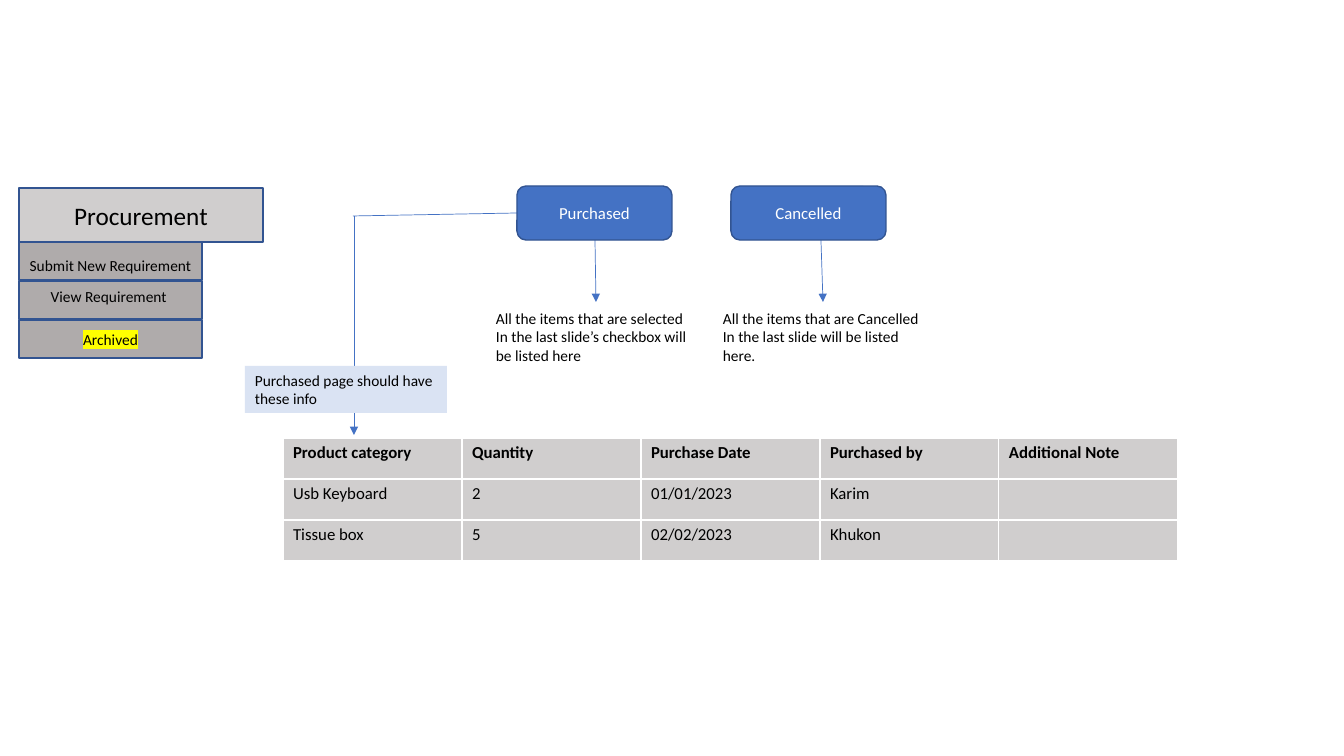
"""Build the procurement slide showing the archived purchases page."""
import pptx
import pptx.util
import pptx.dml.color
import pptx.enum.shapes
import pptx.enum.text
import pptx.oxml
import pptx.oxml.ns

PX = 914400 / 100.8
BLACK = pptx.dml.color.RGBColor(0x00, 0x00, 0x00)
WHITE = pptx.dml.color.RGBColor(0xFF, 0xFF, 0xFF)
BLUE = pptx.dml.color.RGBColor(0x44, 0x72, 0xC4)
OUTLINE = pptx.dml.color.RGBColor(0x32, 0x54, 0x91)
LIGHT_GREY = pptx.dml.color.RGBColor(0xD0, 0xCE, 0xCE)
GREY = pptx.dml.color.RGBColor(0xAF, 0xAB, 0xAB)
PALE_BLUE = pptx.dml.color.RGBColor(0xDA, 0xE3, 0xF3)
YELLOW = pptx.dml.color.RGBColor(0xFF, 0xFF, 0x00)
LEFT = pptx.enum.text.PP_ALIGN.LEFT
CENTER = pptx.enum.text.PP_ALIGN.CENTER
RECTANGLE = pptx.enum.shapes.MSO_SHAPE.RECTANGLE
ROUNDED = pptx.enum.shapes.MSO_SHAPE.ROUNDED_RECTANGLE
NAMESPACE = pptx.oxml.ns.nsdecls("a")


def write(text_frame, text, size=11, color=BLACK, bold=False, align=LEFT, highlight=None):
    text_frame.word_wrap = True
    for index, line in enumerate(text.split("\n")):
        paragraph = text_frame.add_paragraph() if index else text_frame.paragraphs[0]
        paragraph.alignment = align
        run = paragraph.add_run()
        run.text = line
        run.font.size = pptx.util.Pt(size)
        run.font.bold = bold
        run.font.color.rgb = color
        run.font.name = "Calibri"
        if highlight is not None:
            run.font.fill._xPr.find(pptx.oxml.ns.qn("a:solidFill")).addnext(pptx.oxml.parse_xml(
                f'<a:highlight {NAMESPACE}><a:srgbClr val="{highlight}"/></a:highlight>'))


def px(*lengths):
    return [pptx.util.Emu(round(length * PX)) for length in lengths]


presentation = pptx.Presentation()
presentation.slide_width, presentation.slide_height = px(1344, 756)
slide = presentation.slides.add_slide(presentation.slide_layouts[6])

header = ["Product category", "Quantity", "Purchase Date", "Purchased by", "Additional Note"]
rows = [
    header,
    ["Usb Keyboard", "2", "01/01/2023", "Karim", ""],
    ["Tissue box", "5", "02/02/2023", "Khukon", ""],
]
table = slide.shapes.add_table(len(rows), len(header), *px(283, 438, 895, 123)).table
for column in table.columns:
    column.width = px(179)[0]
for row_index, row in enumerate(rows):
    table.rows[row_index].height = px(41)[0]
    for column_index, text in enumerate(row):
        cell = table.cell(row_index, column_index)
        cell.fill.solid()
        cell.fill.fore_color.rgb = LIGHT_GREY
        if text:
            write(cell.text_frame, text, size=12, bold=row_index == 0)

lines = [
    (595, 240, 596, 302, True),
    (821, 240, 823, 302, True),
    (517, 213, 353, 216, False),
    (354, 216, 354, 435, True),
]
for *ends, has_arrow in lines:
    connector = slide.shapes.add_connector(pptx.enum.shapes.MSO_CONNECTOR.STRAIGHT, *px(*ends))
    connector.line.color.rgb = BLUE
    connector.line.width = pptx.util.Pt(0.5)
    if has_arrow:
        connector.line._get_or_add_ln().append(
            pptx.oxml.parse_xml(f'<a:tailEnd {NAMESPACE} type="triangle"/>'))
    connector._element.spPr.append(pptx.oxml.parse_xml(f"<a:effectLst {NAMESPACE}/>"))

centered = {"align": CENTER}
button = {"size": 12, "color": WHITE, "align": CENTER}
boxes = [
    ("Procurement", RECTANGLE, (19, 188, 244, 54), LIGHT_GREY, OUTLINE, 0, {"size": 18, "align": CENTER}),
    ("Submit New Requirement", RECTANGLE, (19, 242, 183, 38), GREY, OUTLINE, 4, centered),
    ("View Requirement ", RECTANGLE, (19, 281, 183, 38), GREY, OUTLINE, -4, centered),
    ("Archived", RECTANGLE, (19, 320, 183, 38), GREY, OUTLINE, 0, {"align": CENTER, "highlight": YELLOW}),
    ("Purchased", ROUNDED, (517, 186, 155, 54), BLUE, OUTLINE, 0, button),
    ("Cancelled", ROUNDED, (731, 186, 155, 54), BLUE, OUTLINE, 0, button),
    ("Purchased page should have these info", RECTANGLE, (245, 366, 202, 47), PALE_BLUE, None, 0, {}),
]
for text, kind, place, fill, outline, text_shift, text_format in boxes:
    shape = slide.shapes.add_shape(kind, *px(*place))
    shape.shadow.inherit = False
    shape.fill.solid()
    shape.fill.fore_color.rgb = fill
    if outline is None:
        shape.line.fill.background()
    else:
        shape.line.color.rgb = outline
        shape.line.width = pptx.util.Pt(1)
    shape.text_frame.vertical_anchor = pptx.enum.text.MSO_ANCHOR.MIDDLE
    shape.text_frame.margin_top, shape.text_frame.margin_bottom = px(
        5 + max(0, 2 * text_shift), 5 + max(0, -2 * text_shift))
    write(shape.text_frame, text, **text_format)

captions = [
    ("All the items that are selected\nIn the last slide’s checkbox will be listed here", 486, 213),
    ("All the items that are Cancelled\nIn the last slide will be listed here.", 713, 222),
]
for text, left, width in captions:
    caption = slide.shapes.add_textbox(*px(left, 304, width, 67))
    write(caption.text_frame, text)

presentation.save("out.pptx")
